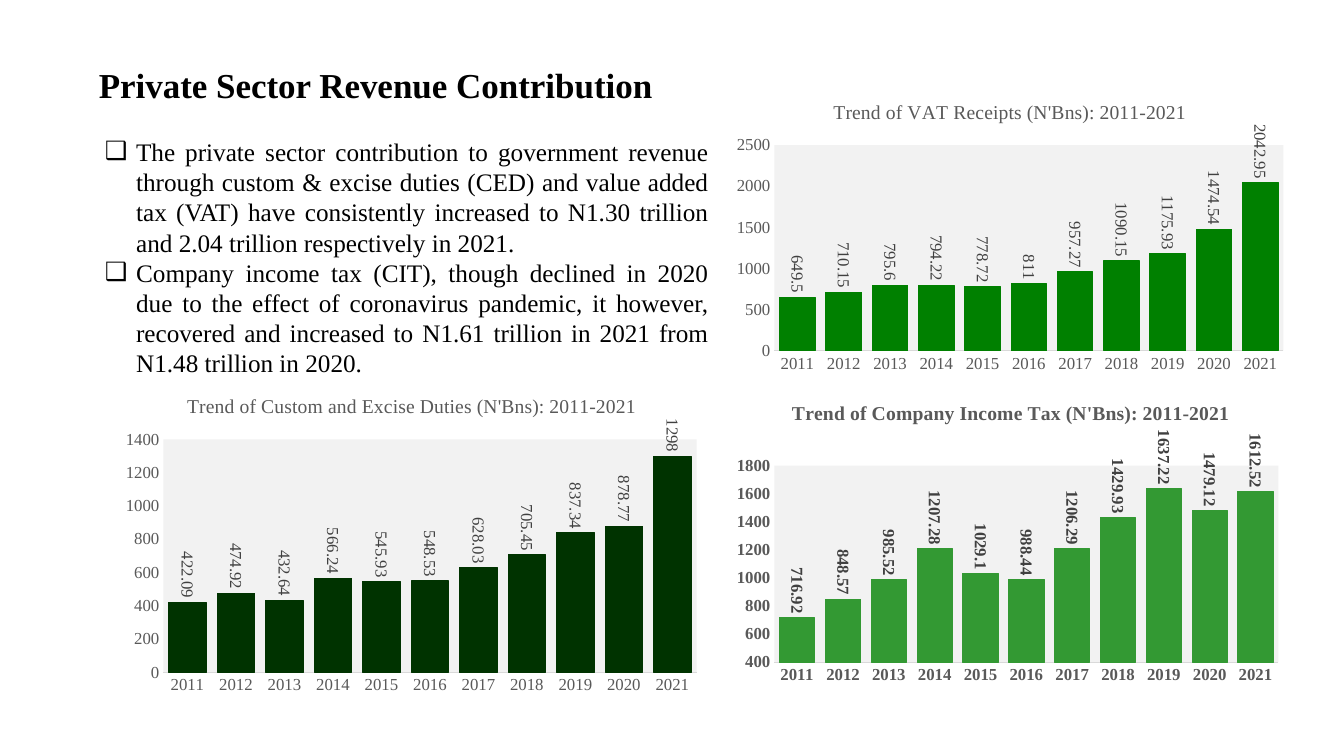
from dataclasses import dataclass

from lxml import etree
from pptx import Presentation
from pptx.chart.data import CategoryChartData
from pptx.dml.color import RGBColor
from pptx.enum.chart import XL_CHART_TYPE, XL_LABEL_POSITION, XL_TICK_MARK
from pptx.enum.text import MSO_ANCHOR, MSO_AUTO_SIZE, PP_ALIGN
from pptx.oxml import parse_xml
from pptx.oxml.ns import nsdecls, qn
from pptx.util import Pt

COLUMN = XL_CHART_TYPE.COLUMN_CLUSTERED
OUTSIDE = XL_LABEL_POSITION.OUTSIDE_END
NO_TICK = XL_TICK_MARK.NONE
TOP, MIDDLE = MSO_ANCHOR.TOP, MSO_ANCHOR.MIDDLE
LEFT, JUSTIFY = PP_ALIGN.LEFT, PP_ALIGN.JUSTIFY
FIXED = MSO_AUTO_SIZE.NONE
PX = 9144


@dataclass(frozen=True)
class Theme:
    """Hold the colours, face and type sizes of the slide."""
    face: str = "Times New Roman"
    ink: str = "000000"
    axis: str = "595959"
    label: str = "404040"
    rule: str = "D9D9D9"
    plot: str = "F2F2F2"
    vat: str = "008000"
    tax: str = "339933"
    duty: str = "003300"
    head: int = 25
    body: int = 18
    title: int = 14
    small: int = 12


@dataclass(frozen=True)
class Trend:
    """Describe one yearly column chart."""
    title: str
    values: tuple
    color: str
    scale: tuple
    area: tuple
    start: tuple
    bold: bool = False


THEME = Theme()
YEARS = [str(year) for year in range(2011, 2022)]
POINTS = (
    "The private sector contribution to government revenue through custom & excise duties (CED) "
    "and value added tax (VAT) have consistently increased to N1.30 trillion and 2.04 trillion "
    "respectively in 2021.",
    "Company income tax (CIT), though declined in 2020 due to the effect of coronavirus pandemic, "
    "it however, recovered and increased to N1.61 trillion in 2021 from N1.48 trillion in 2020.",
)
VAT = Trend(
    "Trend of VAT Receipts (N'Bns): 2011-2021",
    (649.5, 710.15, 795.6, 794.22, 778.72, 811, 957.27, 1090.15, 1175.93, 1474.54, 2042.95),
    THEME.vat, (0, 2500, 500), (48, 60, 505, 204), (103, 11))
TAX = Trend(
    "Trend of Company Income Tax (N'Bns): 2011-2021",
    (716.92, 848.57, 985.52, 1207.28, 1029.1, 988.44, 1206.29, 1429.93, 1637.22, 1479.12, 1612.52),
    THEME.tax, (400, 1800, 200), (48, 80, 500, 195), (62, 12), True)
DUTY = Trend(
    "Trend of Custom and Excise Duties (N'Bns): 2011-2021",
    (422.09, 474.92, 432.64, 566.24, 545.93, 548.53, 628.03, 705.45, 837.34, 878.77, 1298),
    THEME.duty, (0, 1400, 200), (48, 61, 529, 231), (68, 12))


def style(font, size, color, bold=False):
    """Give a font the slide's face with a size, colour and weight."""
    font.name = THEME.face
    font.size = Pt(size)
    font.bold = bold
    font.color.rgb = RGBColor.from_string(color)


def place(shape, box):
    """Move a shape to a box given in px."""
    shape.left, shape.top, shape.width, shape.height = (n * PX for n in box)


def arrange(part, index, box, spot):
    """Fix a chart part at a px spot inside its chart box."""
    for old in part.findall(qn("c:layout")):
        part.remove(old)
    layout = parse_xml(f"<c:layout {nsdecls('c')}/>")
    manual = etree.SubElement(layout, qn("c:manualLayout"))
    if len(spot) == 4:
        etree.SubElement(manual, qn("c:layoutTarget")).set("val", "inner")
    for key in "xy":
        etree.SubElement(manual, qn(f"c:{key}Mode")).set("val", "edge")
    for key, length, full in zip("xywh", spot, box[2:] * 2):
        etree.SubElement(manual, qn(f"c:{key}")).set("val", str(round(length / full, 4)))
    part.insert(index, layout)


def add_head(slide, box):
    """Set the slide title in its placeholder."""
    shape = slide.shapes.title
    place(shape, box)
    frame = shape.text_frame
    frame.text = "Private Sector Revenue Contribution"
    frame.auto_size = FIXED
    frame.vertical_anchor = MIDDLE
    line = frame.paragraphs[0]
    line.alignment = LEFT
    line.line_spacing = 0.9
    style(line.runs[0].font, THEME.head, THEME.ink, True)


def add_list(slide, box):
    """Set the bulleted points in the body placeholder."""
    shape = slide.placeholders[1]
    place(shape, box)
    frame = shape.text_frame
    frame.text = "\n".join(POINTS)
    frame.auto_size = FIXED
    frame.vertical_anchor = TOP
    for line in frame.paragraphs:
        line.alignment = JUSTIFY
        line.line_spacing = 1.0
        line.space_before = line.space_after = Pt(0)
        style(line.runs[0].font, THEME.body, THEME.ink)
        props = line._p.get_or_add_pPr()
        props.set("marL", str(31 * PX))
        props.set("indent", str(-31 * PX))
        etree.SubElement(props, qn("a:buChar")).set("char", "❑")


def style_axes(chart, trend):
    """Format both axes and set the value scale."""
    years, amounts = chart.category_axis, chart.value_axis
    for axis in (years, amounts):
        axis.major_tick_mark = axis.minor_tick_mark = NO_TICK
        axis.has_major_gridlines = False
        style(axis.tick_labels.font, THEME.small, THEME.axis, trend.bold)
    years.format.line.color.rgb = RGBColor.from_string(THEME.rule)
    years.format.line.width = Pt(0.75)
    amounts.format.line.fill.background()
    amounts.minimum_scale, amounts.maximum_scale, amounts.major_unit = trend.scale


def style_bars(chart, trend):
    """Colour the columns and turn their value labels upright."""
    plot = chart.plots[0]
    plot.gap_width, plot.overlap = 30, -27
    plot.vary_by_categories = False
    bars = plot.series[0]
    color = RGBColor.from_string(trend.color)
    bars.format.fill.solid()
    bars.format.fill.fore_color.rgb = color
    bars.format.line.color.rgb = color
    bars.format.line.width = Pt(0.75)
    labels = bars.data_labels
    labels.show_value = True
    labels.position = OUTSIDE
    style(labels.font, THEME.small, THEME.label, trend.bold)
    turn = labels._element.find(qn("c:txPr")).find(qn("a:bodyPr"))
    turn.set("rot", "5400000")
    turn.set("vert", "horz")


def add_trend(slide, box, trend):
    """Draw one titled column chart in a box."""
    data = CategoryChartData()
    data.categories = YEARS
    data.add_series("Series 1", trend.values)
    chart = slide.shapes.add_chart(COLUMN, *(n * PX for n in box), data).chart
    style(chart.font, THEME.small, THEME.ink, trend.bold)
    chart.has_legend = False
    chart.has_title = True
    frame = chart.chart_title.text_frame
    frame.text = trend.title
    style(frame.paragraphs[0].runs[0].font, THEME.title, THEME.axis, trend.bold)
    style_axes(chart, trend)
    style_bars(chart, trend)
    arrange(chart.chart_title._element, 1, box, trend.start)
    area = chart._chartSpace.chart.plotArea
    arrange(area, 0, box, trend.area)
    area.append(parse_xml(
        f'<c:spPr {nsdecls("c", "a")}><a:solidFill><a:srgbClr val="{THEME.plot}"/>'
        "</a:solidFill><a:ln><a:noFill/></a:ln></c:spPr>"))


def main():
    """Build the slide and save it."""
    deck = Presentation()
    deck.slide_width, deck.slide_height = 1333 * PX, 750 * PX
    slide = deck.slides.add_slide(deck.slide_layouts[1])
    add_trend(slide, (720, 84, 565, 291), VAT)
    add_trend(slide, (720, 382, 565, 313), TAX)
    add_trend(slide, (114, 375, 589, 320), DUTY)
    add_list(slide, (94, 130, 619, 252))
    add_head(slide, (88, 31, 677, 110))
    deck.save("out.pptx")


if __name__ == "__main__":
    main()
